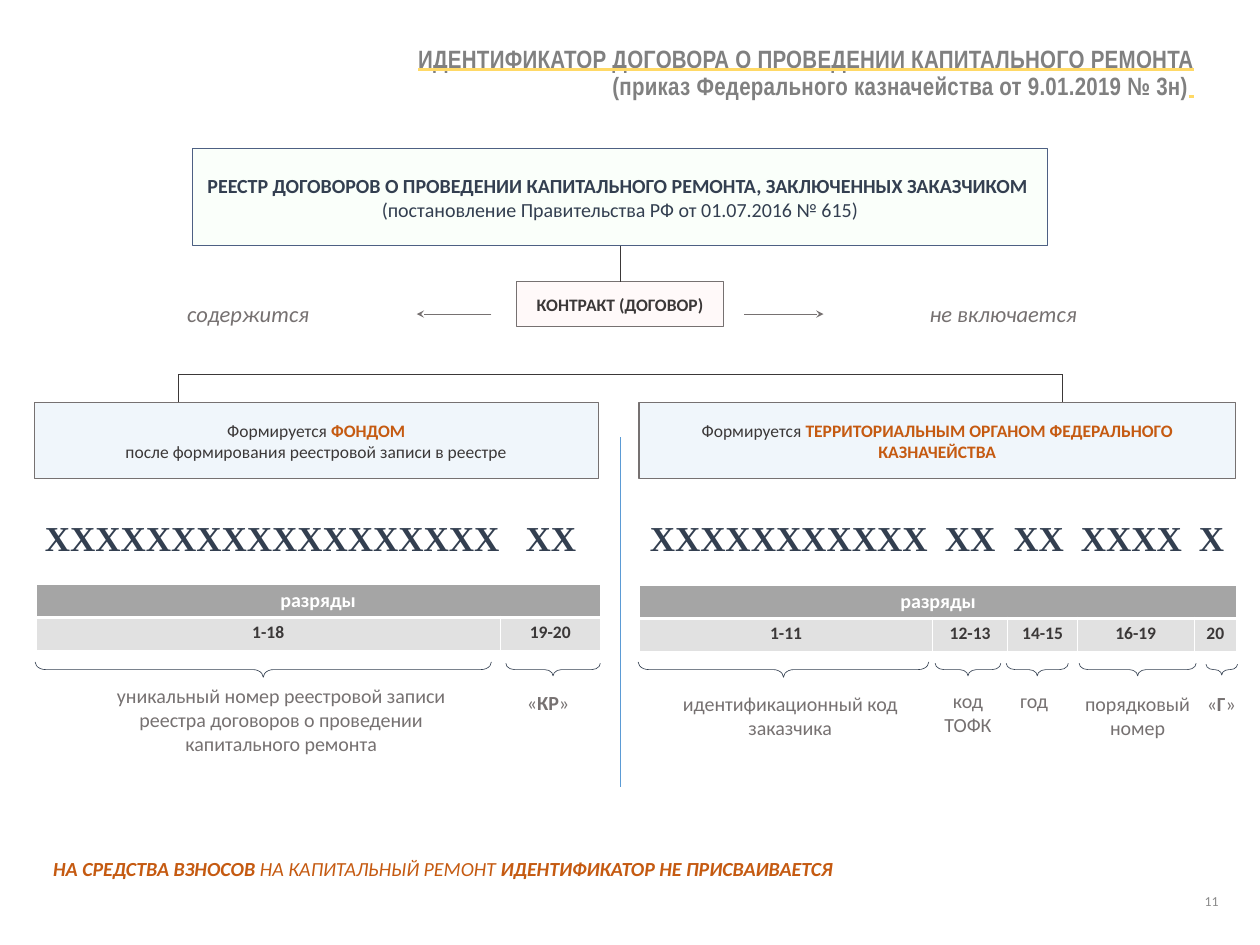
"""Builds the slide on the identifier of a capital repair contract."""
import pptx
import pptx.dml.color
import pptx.enum.dml
import pptx.enum.shapes
import pptx.enum.text
import pptx.oxml
import pptx.oxml.ns
import pptx.util

Inches = pptx.util.Inches
Pt = pptx.util.Pt
ALIGN = pptx.enum.text.PP_ALIGN
ANCHOR = pptx.enum.text.MSO_ANCHOR
SHAPE = pptx.enum.shapes.MSO_SHAPE

NAVY, GRAY, DARK, ORANGE = "333F50", "767171", "3B3838", "C55A11"
WHITE, HEADER, BAND = "FFFFFF", "A5A5A5", "E1E1E1"
BOLD, PLAIN = {"bold": True}, {"bold": False}
ACCENT = {"bold": True, "color": ORANGE}

TITLE = [[
    ("ИДЕНТИФИКАТОР ДОГОВОРА О ПРОВЕДЕНИИ КАПИТАЛЬНОГО РЕМОНТА\v", {"underline": "FFD966"}),
    ("(приказ Федерального казначейства от 9.01.2019 № 3н)", {}),
    (" ", {"underline": "FFD966"}),
]]
REGISTRY = [
    [("РЕЕСТР ДОГОВОРОВ О ПРОВЕДЕНИИ КАПИТАЛЬНОГО РЕМОНТА, ЗАКЛЮЧЕННЫХ ЗАКАЗЧИКОМ ", BOLD)],
    [("(постановление Правительства РФ от 01.07.2016 № 615)", PLAIN)],
]
FUND = [
    [("Формируется ", {}), ("ФОНДОМ", ACCENT)],
    [("после формирования реестровой записи в реестре", {})],
]
TREASURY = [[("Формируется ", {}), ("ТЕРРИТОРИАЛЬНЫМ ОРГАНОМ ФЕДЕРАЛЬНОГО КАЗНАЧЕЙСТВА", ACCENT)]]
FOOTNOTE = [[
    ("НА СРЕДСТВА ВЗНОСОВ ", BOLD),
    ("НА КАПИТАЛЬНЫЙ РЕМОНТ ", PLAIN),
    ("ИДЕНТИФИКАТОР НЕ ПРИСВАИВАЕТСЯ", BOLD),
]]
CODES = [
    ((0.38, 5.68, 6.27, 0.59), (18, 2), (5.34,)),
    ((7.1, 5.68, 6.77, 0.59), (11, 2, 2, 4, 1), (3.28, 4.04, 4.79, 6.1)),
]
TABLES = [
    (0.4, 6.49, (5.16, 1.11), ("1-18", "19-20")),
    (7.11, 6.5, (3.25, 0.84, 0.77, 1.3, 0.47), ("1-11", "12-13", "14-15", "16-19", "20")),
]
BRACES = [
    (0.39, 5.07, 0.17), (5.62, 1.05, 0.14), (7.09, 3.23, 0.17), (10.39, 0.73, 0.14),
    (11.18, 0.69, 0.14), (11.99, 1.3, 0.14), (13.4, 0.35, 0.12),
]
BRACE_MIDDLE = 7.44
LABELS = [
    ((0.98, 7.54, 4.29, 1.2), "уникальный номер реестровой записи реестра договоров о проведении капитального ремонта"),
    ((5.51, 7.61, 1.16, 0.39), [[("«", {}), ("КР", BOLD), ("»", {})]]),
    ((7.24, 7.62, 3.08, 0.64), "идентификационный код заказчика"),
    ((10.26, 7.59, 0.99, 0.66), "код ТОФК"),
    ((11.18, 7.59, 0.62, 0.39), "год"),
    ((11.87, 7.62, 1.54, 0.64), "порядковый номер"),
    ((13.23, 7.62, 0.68, 0.39), [[("«", {}), ("Г", BOLD), ("»", {})]]),
]
BRANCHES = [
    ((1.98, 4.16), (11.8, 4.16)),
    ((11.8, 4.16), (11.8, 4.47)),
    ((1.98, 4.47), (1.98, 4.16)),
]
ARROWS = [((8.27, 3.49), (9.15, 3.49)), ((5.46, 3.49), (4.63, 3.49))]


def rgb(value):
    return pptx.dml.color.RGBColor.from_string(value)


def add_xml(parent, tag, **attributes):
    element = pptx.oxml.parse_xml(f"<a:{tag} {pptx.oxml.ns.nsdecls('a')}/>")
    for name, value in attributes.items():
        element.set(name, str(value))
    parent.append(element)
    return element


def write(frame, text, size=16, color=GRAY, font="Calibri", bold=False, italic=False,
          align=ALIGN.CENTER, anchor=ANCHOR.TOP, margins=(0.12, 0.06, 0.12, 0.06),
          line_spacing=None, tracking=None):
    frame.word_wrap = True
    frame.vertical_anchor = anchor
    frame.margin_left, frame.margin_top, frame.margin_right, frame.margin_bottom = map(Inches, margins)
    content = [[(text, {})]] if isinstance(text, str) else text
    for index, runs in enumerate(content):
        paragraph = frame.add_paragraph() if index else frame.paragraphs[0]
        paragraph.alignment = align
        paragraph.line_spacing = line_spacing
        for words, change in runs:
            for part, piece in enumerate(words.split("\v")):
                if part:
                    paragraph.add_line_break()
                if not piece:
                    continue
                run = paragraph.add_run()
                run.text = piece
                run.font.size = Pt(size)
                run.font.bold = change.get("bold", bold)
                run.font.italic = italic
                run.font.underline = "underline" in change
                run.font.color.rgb = rgb(change.get("color", color))
                properties = run.font._element
                if "underline" in change:
                    fill = add_xml(add_xml(properties, "uFill"), "solidFill")
                    add_xml(fill, "srgbClr", val=change["underline"])
                if tracking:
                    properties.set("spc", str(tracking))
                run.font.name = font


def add_text(slide, box, text, **style):
    shape = slide.shapes.add_textbox(*map(Inches, box))
    write(shape.text_frame, text, **style)
    return shape


def add_box(slide, box, text, fill, opacity, line=None, **style):
    shape = slide.shapes.add_shape(SHAPE.RECTANGLE, *map(Inches, box))
    shape.shadow.inherit = False
    shape.fill.solid()
    shape.fill.fore_color.rgb = rgb(fill)
    color = shape._element.spPr.find(".//" + pptx.oxml.ns.qn("a:srgbClr"))
    add_xml(color, "alpha", val=opacity * 1000)
    if line:
        shape.line.color.rgb = rgb(line)
        shape.line.width = Pt(1)
    else:
        shape.line.fill.background()
    write(shape.text_frame, text, anchor=ANCHOR.MIDDLE, **style)
    return shape


def add_line(slide, start, end, color=DARK, width=0.5, arrow=False):
    connector = slide.shapes.add_connector(
        pptx.enum.shapes.MSO_CONNECTOR.STRAIGHT, *map(Inches, start + end))
    connector.line.color.rgb = rgb(color)
    connector.line.width = Pt(width)
    if arrow:
        add_xml(connector.line._get_or_add_ln(), "tailEnd", type="stealth")
    add_xml(connector._element.spPr, "effectLst")
    return connector


def add_brace(slide, left, width, depth):
    corner = (left + (width - depth) / 2, BRACE_MIDDLE - width / 2)
    brace = slide.shapes.add_shape(SHAPE.RIGHT_BRACE, *map(Inches, corner + (depth, width)))
    brace.rotation = 90
    brace.adjustments[0], brace.adjustments[1] = 0.68, 0.5
    brace.shadow.inherit = False
    brace.fill.background()
    brace.line.color.rgb = rgb(NAVY)
    brace.line.width = Pt(0.5)


def add_digit_table(slide, left, top, widths, ranges):
    table = slide.shapes.add_table(
        2, len(widths), *map(Inches, (left, top, sum(widths), 0.74))).table
    table.horz_banding = False
    for column, width in zip(table.columns, widths):
        column.width = Inches(width)
    table.cell(0, 0).merge(table.cell(0, len(widths) - 1))
    for row, (fill, color, size) in enumerate([(HEADER, WHITE, 16), (BAND, DARK, 14)]):
        for column, label in enumerate(ranges):
            cell = table.cell(row, column)
            properties = cell._tc.get_or_add_tcPr()
            for side in ("lnL", "lnR", "lnT", "lnB"):
                thick = (row, side) in [(0, "lnB"), (1, "lnT")]
                border = add_xml(properties, side, w=Pt(3 if thick else 1))
                add_xml(add_xml(border, "solidFill"), "srgbClr", val=WHITE)
            cell.fill.solid()
            cell.fill.fore_color.rgb = rgb(fill)
            if row or not column:
                write(cell.text_frame, label if row else "разряды", size=size, color=color, bold=True)
                cell.margin_left = cell.margin_right = Inches(0.05)
                cell.margin_top = cell.margin_bottom = Inches(0.05)


def main():
    presentation = pptx.Presentation()
    presentation.slide_width, presentation.slide_height = Inches(14), Inches(10.5)
    slide = presentation.slides.add_slide(presentation.slide_layouts[5])
    title = slide.shapes.title
    title.left, title.top, title.width, title.height = map(Inches, (0.85, 0.26, 12.54, 1.12))
    write(title.text_frame, TITLE, size=20, color="808080", font="Arial Narrow", bold=True,
          align=ALIGN.RIGHT, anchor=ANCHOR.MIDDLE, line_spacing=0.9, tracking=20)

    registry = add_box(slide, (2.14, 1.65, 9.5, 1.08), REGISTRY, "EFFFEF", 30, "4D6083", color=NAVY)
    contract = add_box(slide, (5.74, 3.13, 2.3, 0.5), "КОНТРАКТ (ДОГОВОР)", "FFEFEF", 33, GRAY,
                       size=14, color=DARK, bold=True)
    link = add_line(slide, (6.89, 2.73), (6.89, 3.13))
    link.begin_connect(registry, 2)
    link.end_connect(contract, 0)
    for left, width, text in [(0.38, 6.27, FUND), (7.1, 6.63, TREASURY)]:
        add_box(slide, (left, 4.47, width, 0.85), text, "DEEBF7", 44, GRAY, size=14, color=DARK)
    for start, end in BRANCHES:
        add_line(slide, start, end)
    for start, end in ARROWS:
        add_line(slide, start, end, color=GRAY, arrow=True)
    divider = add_line(slide, (6.89, 4.86), (6.89, 8.73), color="5B9BD5", width=0.25)
    divider.line.dash_style = pptx.enum.dml.MSO_LINE.ROUND_DOT
    for left, text in [(1.98, "содержится"), (10.23, "не включается")]:
        add_text(slide, (left, 3.28, 1.93, 0.41), text, size=18, italic=True,
                 align=ALIGN.LEFT, margins=(0.1, 0.05, 0.1, 0.05))

    for box, groups, stops in CODES:
        code = add_text(slide, box, "\t".join("Х" * count for count in groups), size=28,
                        color=NAVY, font="Times New Roman", bold=True, align=ALIGN.LEFT)
        tabs = add_xml(code.text_frame.paragraphs[0]._p.get_or_add_pPr(), "tabLst")
        for stop in stops:
            add_xml(tabs, "tab", pos=Inches(stop), algn="l")
    for table in TABLES:
        add_digit_table(slide, *table)
    for brace in BRACES:
        add_brace(slide, *brace)
    for box, text in LABELS:
        add_text(slide, box, text)

    add_box(slide, (0.35, 9.31, 10.75, 0.67), FOOTNOTE, WHITE, 69, color=ORANGE, italic=True,
            align=ALIGN.JUSTIFY, margins=(0.24, 0.06, 0.55, 0.06))
    add_text(slide, (13.06, 9.73, 0.6, 0.56), "11", size=11, color="8C8C8C",
             align=ALIGN.RIGHT, anchor=ANCHOR.MIDDLE)
    presentation.save("out.pptx")


if __name__ == "__main__":
    main()
